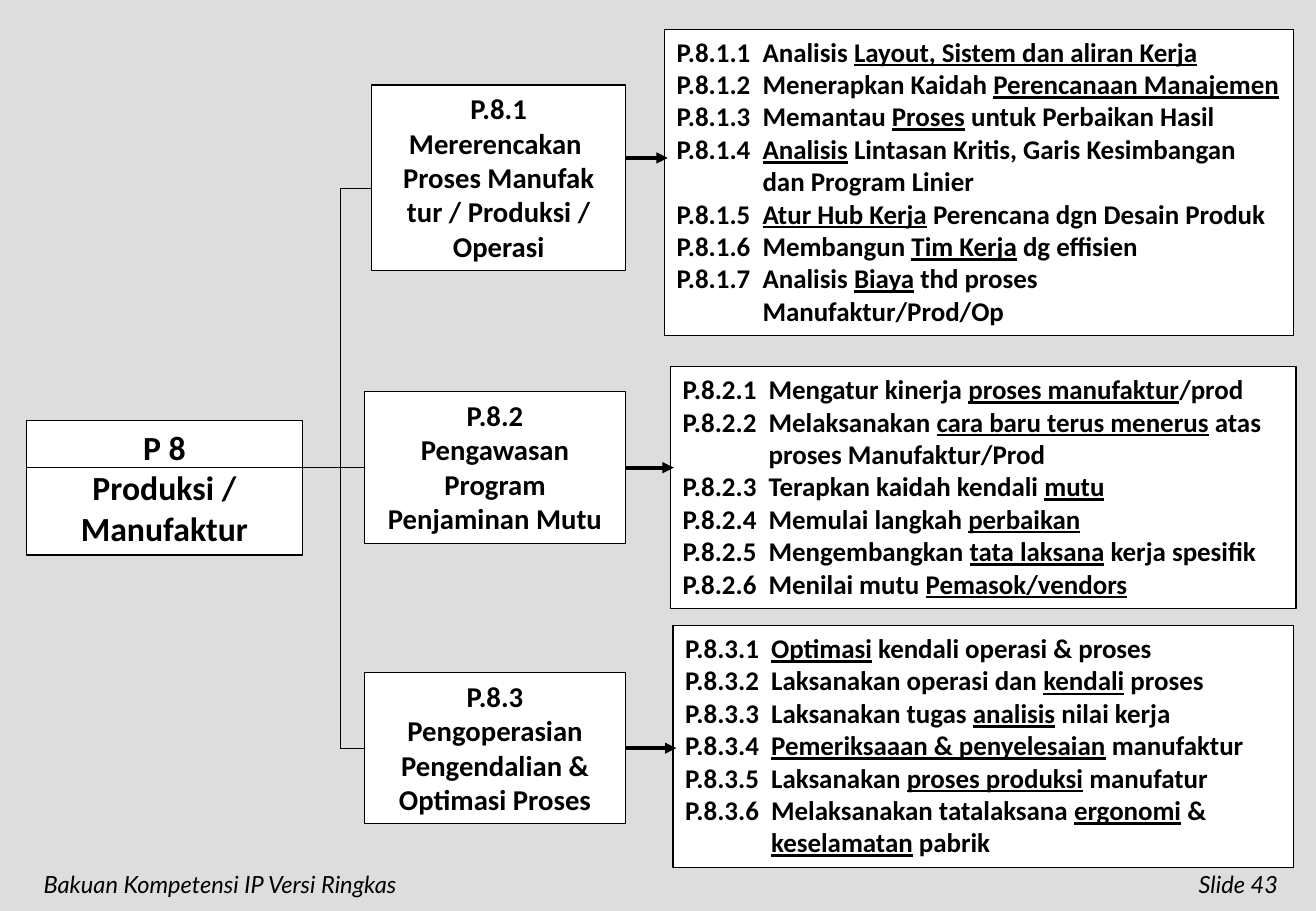
import pptx
import pptx.util
import pptx.dml.color
import pptx.enum.shapes
import pptx.enum.text
import pptx.oxml
import pptx.oxml.ns

Pt = pptx.util.Pt
ALIGN = pptx.enum.text.PP_ALIGN
GREY = pptx.dml.color.RGBColor(0xDD, 0xDD, 0xDD)
WHITE = pptx.dml.color.RGBColor(255, 255, 255)
BLACK = pptx.dml.color.RGBColor(0, 0, 0)

FRAME = {"word_wrap": True, "auto_size": pptx.enum.text.MSO_AUTO_SIZE.NONE,
         "vertical_anchor": pptx.enum.text.MSO_ANCHOR.TOP,
         "margin_left": Pt(7.2), "margin_right": Pt(7.2),
         "margin_top": Pt(3.6), "margin_bottom": Pt(3.6)}
UNIT_FONT = {"name": "Calibri", "size": Pt(20), "bold": True}
STAGE_FONT = {"name": "Calibri", "size": Pt(17), "bold": True}
TASK_FONT = {"name": "Calibri", "size": Pt(16), "bold": True}
FOOTER_FONT = {"name": "Lato", "size": Pt(14), "italic": True}
CENTRED = {"alignment": ALIGN.CENTER, "space_before": Pt(0)}
LISTED = {"alignment": ALIGN.LEFT, "space_before": Pt(0)}
HANGING = 51
TRUNK_X = 201.6

UNIT = ["P 8", "Produksi /", "Manufaktur"]
STAGES = [
    {
        "stage_box": (220.3, 50.4, 150.5, 110.2),
        "stage": ["P.8.1", "Mererencakan ", "Proses Manufak tur / Produksi / Operasi"],
        "branch_y": 111.6, "arrow_y": 93.6, "joined": False,
        "task_box": (393.8, 17.3, 373, 181.4),
        "tasks": [
            "P.8.1.1\tAnalisis _Layout, Sistem dan aliran Kerja_",
            "P.8.1.2\tMenerapkan Kaidah _Perencanaan Manajemen_",
            "P.8.1.3\tMemantau _Proses_ untuk Perbaikan Hasil",
            "P.8.1.4\t_Analisis_ Lintasan Kritis, Garis Kesimbangan\ndan Program Linier",
            "P.8.1.5\t_Atur Hub Kerja_ Perencana dgn Desain Produk",
            "P.8.1.6\tMembangun _Tim Kerja_ dg effisien",
            "P.8.1.7\tAnalisis _Biaya_ thd proses Manufaktur/Prod/Op",
        ],
    },
    {
        "stage_box": (216, 232.2, 154.8, 90),
        "stage": ["P.8.2", "Pengawasan", "Program Penjaminan Mutu"],
        "branch_y": 277.2, "arrow_y": 277.2, "joined": True,
        "task_box": (397.4, 217.4, 370.8, 143.3),
        "tasks": [
            "P.8.2.1\tMengatur kinerja _proses manufaktur_/prod",
            "P.8.2.2\tMelaksanakan _cara baru terus menerus_ atas proses Manufaktur/Prod",
            "P.8.2.3\tTerapkan kaidah kendali _mutu_",
            "P.8.2.4\tMemulai langkah _perbaikan_",
            "P.8.2.5\tMengembangkan _tata laksana_ kerja spesifik",
            "P.8.2.6\tMenilai mutu _Pemasok/vendors_",
        ],
    },
    {
        "stage_box": (216, 398.8, 154.8, 89.4),
        "stage": ["P.8.3", "Pengoperasian Pengendalian & Optimasi Proses"],
        "branch_y": 443.5, "arrow_y": 443.5, "joined": True,
        "task_box": (398.9, 370.8, 367.9, 143.3),
        "tasks": [
            "P.8.3.1\t_Optimasi_ kendali operasi & proses",
            "P.8.3.2\tLaksanakan operasi dan _kendali_ proses",
            "P.8.3.3\tLaksanakan tugas _analisis_ nilai kerja",
            "P.8.3.4\t_Pemeriksaaan & penyelesaian_ manufaktur",
            "P.8.3.5\tLaksanakan _proses produksi_ manufatur",
            "P.8.3.6\tMelaksanakan tatalaksana _ergonomi_ & _keselamatan_ pabrik",
        ],
    },
]


def apply(target, values):
    for name, value in values.items():
        setattr(target, name, value)


def element(tag, attributes=""):
    return pptx.oxml.parse_xml(
        f'<a:{tag} {pptx.oxml.ns.nsdecls("a")} {attributes}/>')


def place(shape, box):
    apply(shape, dict(zip(("left", "top", "width", "height"), map(Pt, box))))


def write(shape, lines, font, layout, hanging=0):
    frame = shape.text_frame
    apply(frame, FRAME)
    for number, line in enumerate(lines):
        paragraph = frame.add_paragraph() if number else frame.paragraphs[0]
        apply(paragraph, layout)
        properties = paragraph._p.get_or_add_pPr()
        properties.set("marL", str(Pt(hanging)))
        properties.set("indent", str(-Pt(hanging)))
        properties.append(element("buNone"))
        for order, piece in enumerate(line.split("_")):
            for part, words in enumerate(piece.split("\n")):
                if part:
                    paragraph.add_line_break()
                if words:
                    run = paragraph.add_run()
                    run.text = words
                    apply(run.font, font)
                    run.font.underline = order % 2 == 1
                    run.font.color.rgb = BLACK


def outline(shape):
    shape.fill.solid()
    shape.fill.fore_color.rgb = WHITE
    shape.line.color.rgb = BLACK
    shape.line.width = Pt(0.75)


def draw_line(slide, start, end, width=0.75, arrow=False):
    line = slide.shapes.add_connector(
        pptx.enum.shapes.MSO_CONNECTOR.STRAIGHT, *map(Pt, start + end))
    line.line.color.rgb = BLACK
    line.line.width = Pt(width)
    if arrow:
        line.line._get_or_add_ln().append(element("tailEnd", 'type="triangle"'))
    line._element.spPr.append(element("effectLst"))
    return line


def draw_unit(slide, box):
    unit = slide.shapes.title
    place(unit, box)
    outline(unit)
    write(unit, UNIT, UNIT_FONT, CENTRED)
    y = STAGES[1]["branch_y"]
    draw_line(slide, (box[0], y), (TRUNK_X, y))
    draw_line(slide, (TRUNK_X, STAGES[0]["branch_y"]), (TRUNK_X, STAGES[-1]["branch_y"]))


def draw_stage(slide, content, tasks):
    box, task_box = content["stage_box"], content["task_box"]
    place(tasks, task_box)
    outline(tasks)
    write(tasks, content["tasks"], TASK_FONT, LISTED, HANGING)
    stage = slide.shapes.add_shape(
        pptx.enum.shapes.MSO_SHAPE.RECTANGLE, *map(Pt, box))
    stage.shadow.inherit = False
    outline(stage)
    write(stage, content["stage"], STAGE_FONT, CENTRED)
    branch_y, arrow_y = content["branch_y"], content["arrow_y"]
    branch = draw_line(slide, (TRUNK_X, branch_y), (box[0], branch_y))
    arrow = draw_line(slide, (box[0] + box[2], arrow_y),
                      (task_box[0] + 2, arrow_y), 2.25, True)
    if content["joined"]:
        branch.end_connect(stage, 1)
        arrow.begin_connect(stage, 3)


def draw_footer(slide, box, words, alignment):
    footer = slide.shapes.add_textbox(*map(Pt, box))
    write(footer, [words], FOOTER_FONT, {"alignment": alignment})


def main():
    deck = pptx.Presentation()
    deck.slide_width, deck.slide_height = Pt(780), Pt(540)
    slide = deck.slides.add_slide(deck.slide_layouts.get_by_name("Comparison"))
    slide.background.fill.solid()
    slide.background.fill.fore_color.rgb = GREY
    *task_lists, spare = list(slide.placeholders)[1:]
    spare._element.getparent().remove(spare._element)
    draw_footer(slide, (18.7, 511.9, 270, 27), "Bakuan Kompetensi IP Versi Ringkas", ALIGN.LEFT)
    draw_footer(slide, (654.5, 511.9, 110.2, 27), "Slide 43", ALIGN.RIGHT)
    draw_unit(slide, (15.8, 249.1, 163.4, 79.9))
    for content, tasks in zip(STAGES, task_lists):
        draw_stage(slide, content, tasks)
    deck.save("out.pptx")


if __name__ == "__main__":
    main()
